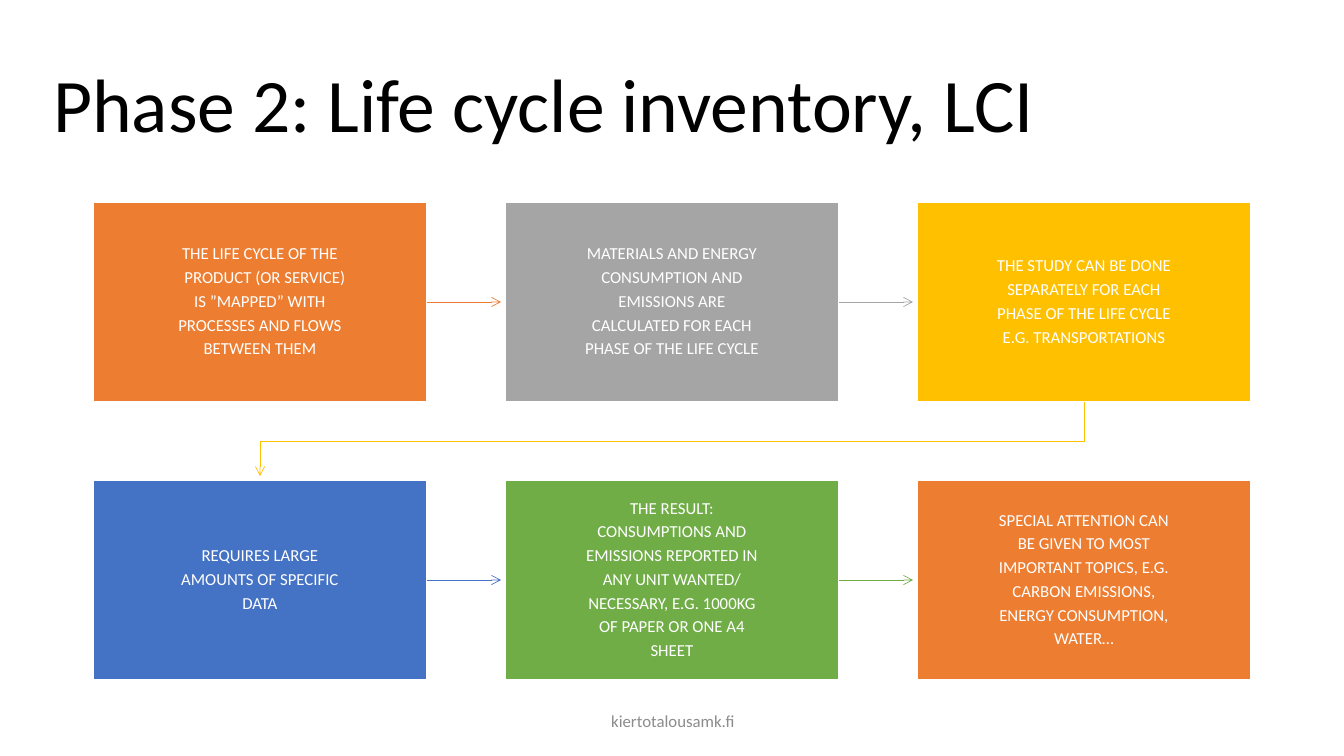
from pptx import Presentation
from pptx.dml.color import RGBColor
from pptx.enum.shapes import MSO_CONNECTOR, MSO_SHAPE
from pptx.enum.text import MSO_ANCHOR, PP_ALIGN
from pptx.oxml.ns import qn
from pptx.util import Pt
from lxml import etree

STRAIGHT = MSO_CONNECTOR.STRAIGHT
RECT = MSO_SHAPE.RECTANGLE
MIDDLE = MSO_ANCHOR.MIDDLE
LEFT, CENTER = PP_ALIGN.LEFT, PP_ALIGN.CENTER
PX = 914400 / 100.8
COLORS = {
    "orange": "ED7D31", "gray": "A5A5A5", "yellow": "FFC000",
    "blue": "4472C4", "green": "70AD47",
    "white": "FFFFFF", "black": "000000", "footer": "8C8C8C",
}


def write(sp, lines, size, color, align=CENTER, spacing=0.9, after=0, inset=None):
    tf = sp.text_frame
    tf.word_wrap = True
    tf.vertical_anchor = MIDDLE
    if inset:
        tf.margin_left = tf.margin_right = tf.margin_top = tf.margin_bottom = round(inset * PX)
    for i, line in enumerate(lines):
        p = tf.add_paragraph() if i else tf.paragraphs[0]
        p.alignment = align
        p.line_spacing = spacing
        p.space_before = Pt(0)
        p.space_after = Pt(after)
        r = p.add_run()
        r.text = line
        r.font.name = "Calibri"
        r.font.size = Pt(size)
        r.font.color.rgb = RGBColor.from_string(COLORS[color])


def style_arrow(sp, color):
    sp.line.color.rgb = RGBColor.from_string(COLORS[color])
    sp.line.width = Pt(0.5)
    spPr = sp._element.spPr
    etree.SubElement(spPr.find(qn("a:ln")), qn("a:tailEnd"), type="arrow")
    etree.SubElement(spPr, qn("a:effectLst"))


prs = Presentation()
prs.slide_width = round(1344 * PX)
prs.slide_height = round(756 * PX)
s = prs.slides.add_slide(prs.slide_layouts[5])

title = s.shapes.title
title.left, title.top, title.width, title.height = [round(v * PX) for v in (43, 35, 1258, 146)]
write(title, ["Phase 2: Life cycle inventory, LCI"], 54, "black", align=LEFT)

footer = s.shapes.add_textbox(*[round(v * PX) for v in (446, 701, 454, 40)])
write(footer, ["kiertotalousamk.fi"], 12, "footer", spacing=1, after=6)

STEPS = [
    ("orange", ["THE LIFE CYCLE OF THE", "PRODUCT (OR SERVICE)", "IS ”MAPPED” WITH",
                "PROCESSES AND FLOWS", "BETWEEN THEM"]),
    ("gray", ["MATERIALS AND ENERGY", "CONSUMPTION AND", "EMISSIONS ARE",
              "CALCULATED FOR EACH", "PHASE OF THE LIFE CYCLE"]),
    ("yellow", ["THE STUDY CAN BE DONE", "SEPARATELY FOR EACH",
                "PHASE OF THE LIFE CYCLE", "E.G. TRANSPORTATIONS"]),
    ("blue", ["REQUIRES LARGE", "AMOUNTS OF SPECIFIC", "DATA"]),
    ("green", ["THE RESULT:", "CONSUMPTIONS AND", "EMISSIONS REPORTED IN",
               "ANY UNIT WANTED/", "NECESSARY, E.G. 1000KG", "OF PAPER OR ONE A4", "SHEET"]),
    ("orange", ["SPECIAL ATTENTION CAN", "BE GIVEN TO MOST", "IMPORTANT TOPICS, E.G.",
                "CARBON EMISSIONS,", "ENERGY CONSUMPTION,", "WATER…"]),
]
COLS = 3
BOX_LEFT, BOX_TOP, BOX_W, BOX_H = 93, 202, 334, 200
STEP_X, STEP_Y = 412, 278
ARROW_LEN = 74

for i, (color, lines) in enumerate(STEPS):
    row, col = divmod(i, COLS)
    x, y = BOX_LEFT + col * STEP_X, BOX_TOP + row * STEP_Y
    sp = s.shapes.add_shape(RECT, *[round(v * PX) for v in (x, y, BOX_W, BOX_H)])
    sp.shadow.inherit = False
    sp.fill.solid()
    sp.fill.fore_color.rgb = RGBColor.from_string(COLORS[color])
    sp.line.color.rgb = RGBColor.from_string(COLORS["white"])
    sp.line.width = Pt(1)
    write(sp, lines, 12, "white", after=4, inset=16)
    if i == 0:
        sp.text_frame.paragraphs[1]._p.get_or_add_pPr().set("marL", str(round(10 * PX)))
    if col < COLS - 1:
        start, mid = x + BOX_W, y + BOX_H // 2
        ends = (start, mid, start + ARROW_LEN, mid)
        style_arrow(s.shapes.add_connector(STRAIGHT, *[round(v * PX) for v in ends]), color)

first_mid = BOX_LEFT + BOX_W // 2
last_mid = first_mid + (COLS - 1) * STEP_X
row_end = BOX_TOP + BOX_H
turn = row_end + 39
fb = s.shapes.build_freeform(last_mid, row_end, scale=PX)
fb.add_line_segments([(last_mid, turn), (first_mid, turn), (first_mid, row_end + ARROW_LEN)], close=False)
return_arrow = fb.convert_to_shape()
return_arrow.fill.background()
style_arrow(return_arrow, "yellow")

prs.save("out.pptx")
